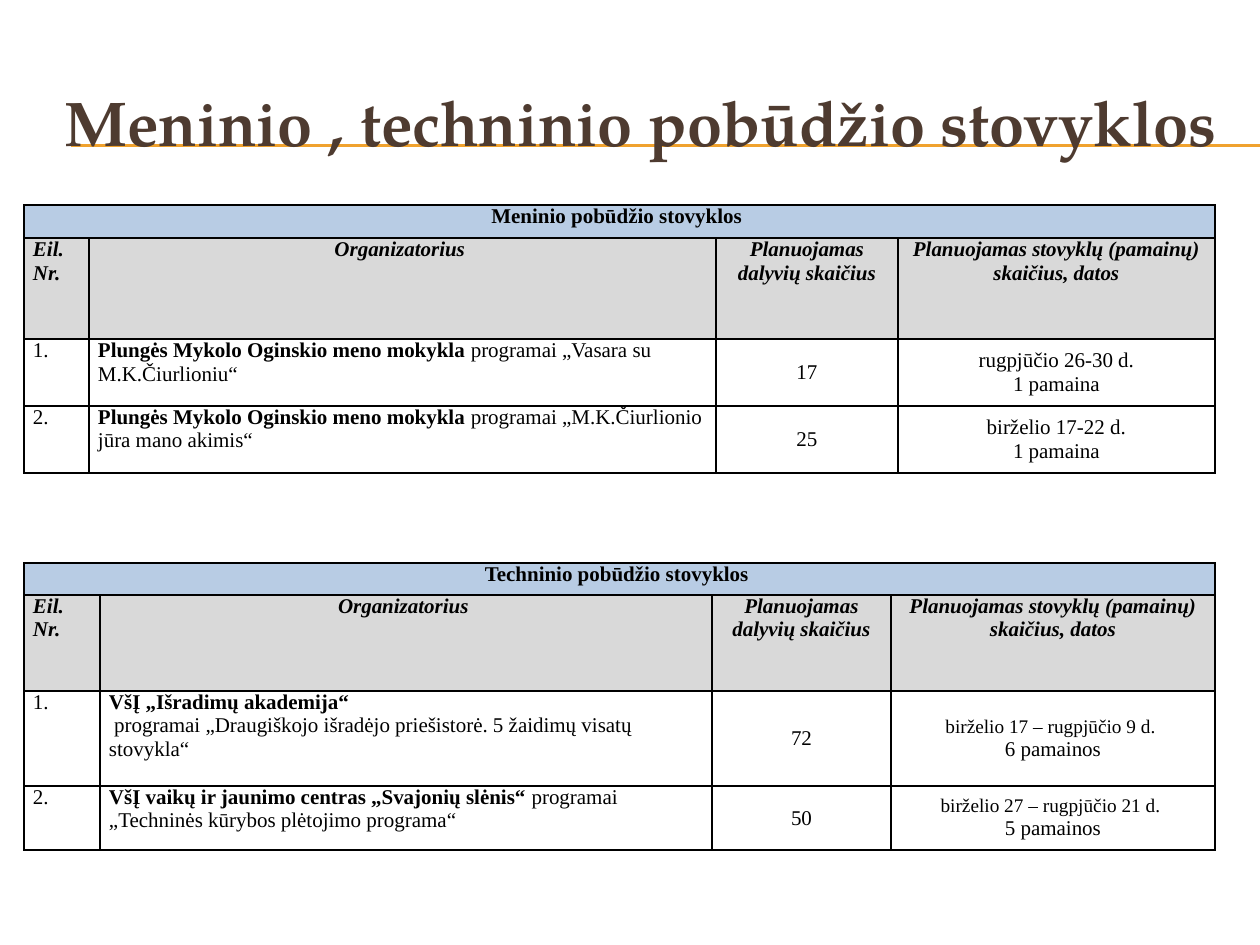
"""Build a slide with two tables of art and technical summer camps."""
import dataclasses

import pptx
import pptx.dml.color
import pptx.enum.shapes
import pptx.enum.text
import pptx.oxml
import pptx.oxml.ns
import pptx.util

ALIGN = pptx.enum.text.PP_ALIGN
ANCHOR = pptx.enum.text.MSO_ANCHOR


@dataclasses.dataclass(frozen=True)
class Theme:
    head_font: str = "TeX Gyre Pagella"
    body_font: str = "Times New Roman"
    head_size: int = 36
    body_size: int = 12
    small_size: int = 11
    rule_width: float = 0.75
    edge_width: int = 1
    title: str = "4E3B30"
    rule: str = "F0A22E"
    ink: str = "000000"
    band: str = "B8CCE4"
    label: str = "D9D9D9"
    plain: str = "FFFFFF"


THEME = Theme()
LABELS = ["Eil. Nr.", "Organizatorius ", "Planuojamas dalyvių skaičius",
          "Planuojamas stovyklų (pamainų) skaičius, datos"]


def px(count):
    return pptx.util.Emu(round(count * 914400 / 126))


def paint(color, value):
    color.rgb = pptx.dml.color.RGBColor.from_string(value)


def add_run(para, text, size=THEME.body_size, font=THEME.body_font,
            color=THEME.ink, bold=False, slant=False):
    run = para.add_run()
    run.text = text
    run.font.name = font
    run.font.size = pptx.util.Pt(size)
    run.font.bold = bold
    run.font.italic = slant
    paint(run.font.color, color)


def add_rule(slide, top):
    line = slide.shapes.add_connector(
        pptx.enum.shapes.MSO_CONNECTOR.STRAIGHT, px(71), px(top), px(1260), px(top))
    line.line.width = pptx.util.Pt(THEME.rule_width)
    paint(line.line.color, THEME.rule)
    props = line._element.spPr
    props.append(props.makeelement(pptx.oxml.ns.qn("a:effectLst"), {}))


def set_title(slide, text):
    title = slide.shapes.title
    title.left, title.top, title.width, title.height = map(px, (42, 63, 1197, 116))
    frame = title.text_frame
    frame.word_wrap = True
    frame.vertical_anchor = ANCHOR.MIDDLE
    para = frame.paragraphs[0]
    para.alignment = ALIGN.CENTER
    add_run(para, text, THEME.head_size, THEME.head_font, THEME.title, bold=True)
    slide.shapes._spTree.append(title._element)


def add_edges(cell):
    props = cell._tc.get_or_add_tcPr()
    width = pptx.util.Pt(THEME.edge_width)
    for spot, side in enumerate("LRTB"):
        props.insert(spot, pptx.oxml.parse_xml(
            f'<a:ln{side} {pptx.oxml.ns.nsdecls("a")} w="{width}"><a:solidFill>'
            f'<a:srgbClr val="{THEME.ink}"/></a:solidFill></a:ln{side}>'))


def style_cell(cell, fill):
    cell.fill.solid()
    paint(cell.fill.fore_color, fill)
    cell.margin_left = cell.margin_right = px(9)
    cell.margin_top = cell.margin_bottom = 0
    add_edges(cell)


def fill_cell(cell, paras, align=ALIGN.CENTER, anchor=ANCHOR.TOP):
    cell.vertical_anchor = anchor
    frame = cell.text_frame
    for spot, runs in enumerate(paras):
        para = frame.add_paragraph() if spot else frame.paragraphs[0]
        para.alignment = align
        for text, look in runs:
            add_run(para, text, **look)


def add_camps(slide, top, cols, rows, name, camps):
    shape = slide.shapes.add_table(len(rows), len(cols), px(24), px(top),
                                   px(sum(cols)), px(sum(rows)))
    table = shape.table
    table.first_row = table.horz_banding = False
    for col, width in zip(table.columns, cols):
        col.width = px(width)
    for row, height in zip(table.rows, rows):
        row.height = px(height)
    fills = [THEME.band, THEME.label] + [THEME.plain] * len(camps)
    for row, fill in zip(table.rows, fills):
        for cell in row.cells:
            style_cell(cell, fill)
    table.cell(0, 0).merge(table.cell(0, len(cols) - 1))
    fill_cell(table.cell(0, 0), [[(name, {"bold": True})]])
    for spot, text in enumerate(LABELS):
        fill_cell(table.cell(1, spot), [[(text, {"bold": True, "slant": True})]],
                  ALIGN.CENTER if spot else ALIGN.LEFT)
    for rank, (host, count, dates) in enumerate(camps, 1):
        cells = table.rows[rank + 1].cells
        fill_cell(cells[0], [[(f"{rank}.", {})]], ALIGN.LEFT)
        fill_cell(cells[1], host, ALIGN.LEFT)
        fill_cell(cells[2], [[(str(count), {})]], anchor=ANCHOR.MIDDLE)
        fill_cell(cells[3], dates, anchor=ANCHOR.MIDDLE)


def main():
    deck = pptx.Presentation()
    deck.slide_width, deck.slide_height = px(1260), px(945)
    slide = deck.slides.add_slide(deck.slide_layouts[5])
    for top in (145, 146):
        add_rule(slide, top)
    set_title(slide, "Meninio , techninio pobūdžio stovyklos")

    bold, small = {"bold": True}, {"size": THEME.small_size}
    school = ("Plungės Mykolo Oginskio meno mokykla", bold)
    add_camps(slide, 205, [65, 627, 182, 317], [33, 101, 67, 67],
              "Meninio pobūdžio stovyklos ", [
        ([[school, (" programai „Vasara su M.K.Čiurlioniu“", {})]], 17,
         [[("rugpjūčio 26-30 d.", {})], [("1 pamaina", {})]]),
        ([[school, (" programai „M.K.Čiurlionio jūra mano akimis“", {})]], 25,
         [[("birželio 17-22 d.", {})], [("1 pamaina", {})]]),
    ])
    add_camps(slide, 563, [76, 612, 179, 324], [32, 96, 95, 64],
              "Techninio pobūdžio stovyklos ", [
        ([[("VšĮ „Išradimų akademija“", bold)],
          [(" programai „Draugiškojo išradėjo priešistorė. "
            "5 žaidimų visatų stovykla“", {})]], 72,
         [[("birželio 17 – rugpjūčio 9 d. ", small)], [("6 pamainos", {})]]),
        ([[("VšĮ vaikų ir jaunimo centras „Svajonių slėnis“", bold),
           (" programai „Techninės kūrybos plėtojimo programa“", {})]], 50,
         [[("birželio 27 – rugpjūčio 21 d. ", small)], [("5 pamainos", {})]]),
    ])
    deck.save("out.pptx")


if __name__ == "__main__":
    main()
